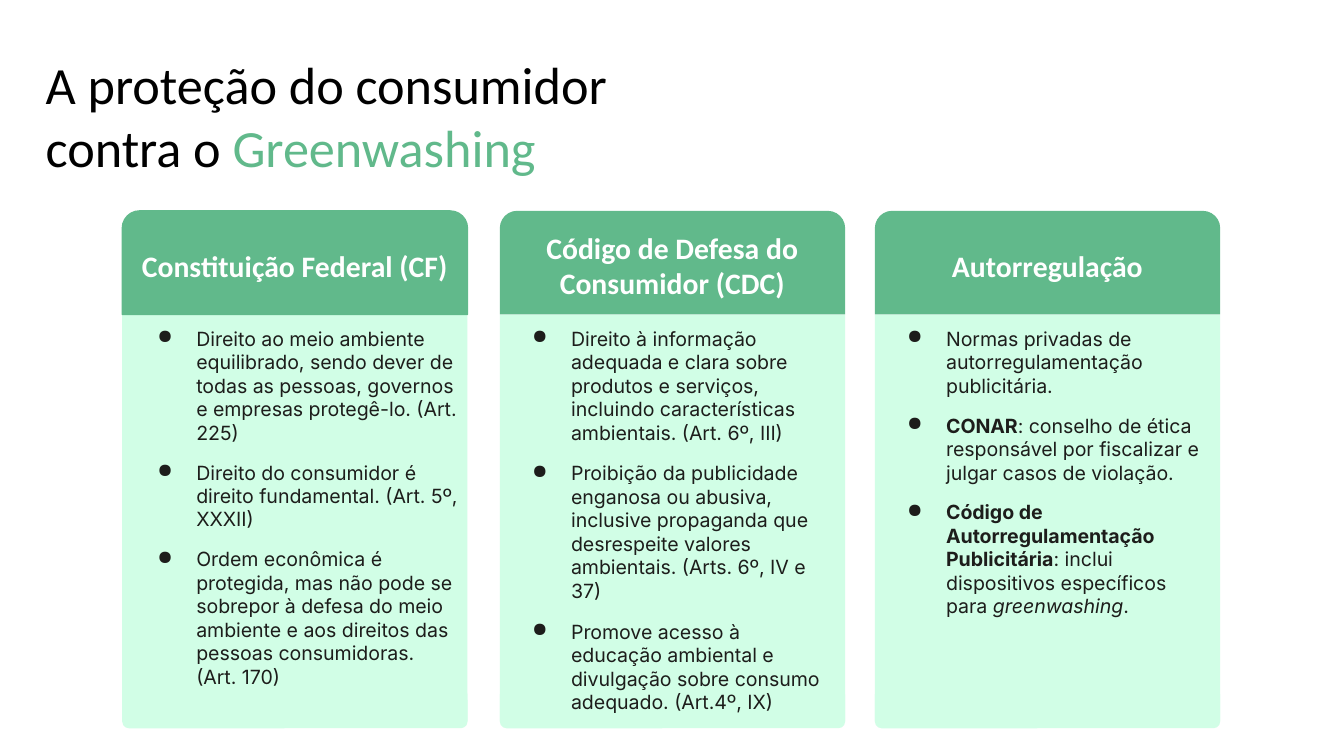
import lxml.etree
import pptx
import pptx.dml.color
import pptx.enum.shapes
import pptx.enum.text
import pptx.oxml.ns
import pptx.util

Pt = pptx.util.Pt
ALIGN = pptx.enum.text.PP_ALIGN
ANCHOR = pptx.enum.text.MSO_ANCHOR
SHAPE = pptx.enum.shapes.MSO_SHAPE

COLORS = {
    "black": "000000",
    "white": "FFFFFF",
    "ink": "1D1D1B",
    "green": "61B98B",
    "mint": "D1FEE6",
}

COLUMN_WIDTH = 185
HEADER_TOP, HEADER_HEIGHT = 113, 55.5
BODY_TOP = HEADER_TOP + HEADER_HEIGHT
BODY_HEIGHT, TEXT_HEIGHT = 218, 210
FOOT_TOP, FOOT_HEIGHT = 368.6, 21.6

COLUMNS = [
    {
        "left": 65.5, "text_left": 67, "gap": 8.8,
        "header": "Constituição Federal (CF)",
        "items": [
            [("Direito ao meio ambiente equilibrado, sendo dever de todas as pessoas, "
              "governos e empresas protegê-lo. (Art. 225)", "")],
            [("Direito do consumidor é direito fundamental. (Art. 5º, XXXII)", "")],
            [("Ordem econômica é protegida, mas não pode se sobrepor à defesa do meio "
              "ambiente e aos direitos das pessoas consumidoras. (Art. 170)", "")],
        ],
    },
    {
        "left": 267.8, "text_left": 267.8, "gap": 9.3,
        "header": "Código de Defesa do Consumidor (CDC)",
        "items": [
            [("Direito à informação adequada e clara sobre produtos e serviços, "
              "incluindo características ambientais. (Art. 6º, III)", "")],
            [("Proibição da publicidade enganosa ou abusiva, inclusive propaganda que "
              "desrespeite valores ambientais. (Arts. 6º, IV e 37)", "")],
            [("Promove acesso à educação ambiental e divulgação sobre consumo "
              "adequado. (Art.4º, IX)", "")],
        ],
    },
    {
        "left": 468.7, "text_left": 468.7, "gap": 8.8,
        "header": "Autorregulação",
        "items": [
            [("Normas privadas de autorregulamentação publicitária.", "")],
            [("CONAR", "bold"),
             (": conselho de ética responsável por fiscalizar e julgar casos de violação.", "")],
            [("Código de Autorregulamentação Publicitária", "bold"),
             (": inclui dispositivos específicos para ", ""),
             ("greenwashing", "italic"),
             (".", "")],
        ],
    },
]


class SlideBuilder:
    heading_font = "Calibri"
    body_font = "Inter"

    def __init__(self, slide):
        self.slide = slide

    def color(self, name):
        return pptx.dml.color.RGBColor.from_string(COLORS[name])

    def format_run(self, run, font, size, color, bold=False, italic=False):
        run.font.name = font
        run.font.size = Pt(size)
        run.font.bold = bold
        run.font.italic = italic
        run.font.color.rgb = self.color(color)

    def set_frame(self, text_frame, margin, anchor):
        text_frame.word_wrap = True
        text_frame.auto_size = pptx.enum.text.MSO_AUTO_SIZE.NONE
        text_frame.vertical_anchor = anchor
        text_frame.margin_left = text_frame.margin_right = Pt(margin)
        text_frame.margin_top = text_frame.margin_bottom = Pt(margin)

    def title(self, left, top, width, height, lines):
        shape = self.slide.shapes.title
        shape.left, shape.top = Pt(left), Pt(top)
        shape.width, shape.height = Pt(width), Pt(height)
        text_frame = shape.text_frame
        self.set_frame(text_frame, 7.2, ANCHOR.TOP)
        text_frame.text = "\n".join("" for _ in lines)
        for paragraph, parts in zip(text_frame.paragraphs, lines):
            paragraph.alignment = ALIGN.LEFT
            for text, color in parts:
                run = paragraph.add_run()
                run.text = text
                self.format_run(run, self.heading_font, 28, color)

    def panel(self, kind, left, top, height, color, adjustments=()):
        shape = self.slide.shapes.add_shape(
            kind, Pt(left), Pt(top), Pt(COLUMN_WIDTH), Pt(height))
        shape.shadow.inherit = False
        shape.fill.solid()
        shape.fill.fore_color.rgb = self.color(color)
        shape.line.fill.background()
        for index, value in enumerate(adjustments):
            shape.adjustments[index] = value
        return shape

    def header(self, left, text):
        shape = self.panel(SHAPE.ROUND_2_SAME_RECTANGLE, left, HEADER_TOP,
                           HEADER_HEIGHT, "green", (0.167, 0))
        self.set_frame(shape.text_frame, 6.5, ANCHOR.MIDDLE)
        shape.text_frame.text = text
        paragraph = shape.text_frame.paragraphs[0]
        paragraph.alignment = ALIGN.CENTER
        self.format_run(paragraph.runs[0], self.heading_font, 15.9, "white", bold=True)
        return shape

    def bullet(self, paragraph):
        properties = paragraph._p.get_or_add_pPr()
        properties.set("marL", str(Pt(31.7)))
        properties.set("indent", str(Pt(-20.9)))
        qn = pptx.oxml.ns.qn
        bullet_color = lxml.etree.SubElement(properties, qn("a:buClr"))
        lxml.etree.SubElement(bullet_color, qn("a:srgbClr"), val=COLORS["ink"])
        lxml.etree.SubElement(properties, qn("a:buChar"), char="●")

    def bullet_list(self, left, items, gap):
        shape = self.slide.shapes.add_textbox(
            Pt(left), Pt(BODY_TOP), Pt(COLUMN_WIDTH), Pt(TEXT_HEIGHT))
        text_frame = shape.text_frame
        self.set_frame(text_frame, 6.5, ANCHOR.TOP)
        for index, parts in enumerate(items):
            paragraph = text_frame.add_paragraph() if index else text_frame.paragraphs[0]
            paragraph.space_before = Pt(gap if index else 0)
            self.bullet(paragraph)
            for text, style in parts:
                run = paragraph.add_run()
                run.text = text
                self.format_run(run, self.body_font, 10.5, "ink",
                                style == "bold", style == "italic")


def main():
    presentation = pptx.Presentation()
    presentation.slide_width, presentation.slide_height = Pt(720), Pt(405)
    slide = presentation.slides.add_slide(presentation.slide_layouts[5])
    builder = SlideBuilder(slide)

    builder.title(17.3, 20.9, 561.6, 92.2, [
        [("A proteção do consumidor", "black")],
        [("contra o ", "black"), ("Greenwashing", "green")],
    ])
    for index, column in enumerate(COLUMNS):
        left = column["left"]
        builder.panel(SHAPE.RECTANGLE, left, BODY_TOP, BODY_HEIGHT, "mint")
        builder.panel(SHAPE.ROUNDED_RECTANGLE, left, FOOT_TOP, FOOT_HEIGHT, "mint", (0.167,))
        header = builder.header(left, column["header"])
        if index == 0:
            header.line.color.rgb = builder.color("green")
            header.line.width = Pt(0.66)
        builder.bullet_list(column["text_left"], column["items"], column["gap"])

    presentation.save("out.pptx")


if __name__ == "__main__":
    main()
